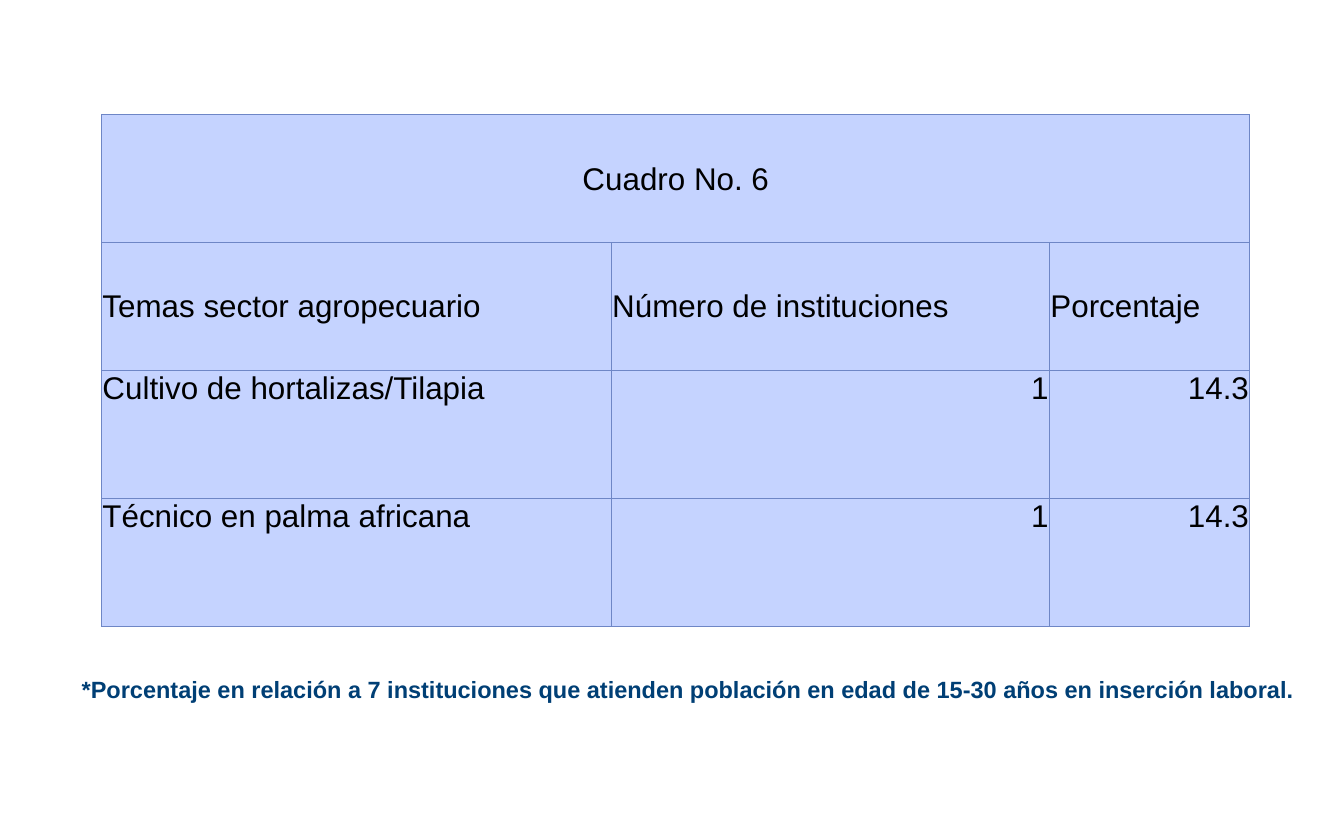
from pptx import Presentation
from pptx import util as u
from pptx.dml.color import RGBColor
from pptx.enum import text
from pptx.oxml import parse_xml
from pptx.oxml.ns import nsdecls

BLACK = RGBColor(0x00, 0x00, 0x00)
NAVY = RGBColor(0x00, 0x3F, 0x75)
PALE_BLUE = RGBColor(0xC5, 0xD3, 0xFF)
BORDER_BLUE = RGBColor(0x6E, 0x86, 0xC6)

LEFT, CENTER, RIGHT = text.PP_ALIGN.LEFT, text.PP_ALIGN.CENTER, text.PP_ALIGN.RIGHT
TOP, MIDDLE = text.MSO_ANCHOR.TOP, text.MSO_ANCHOR.MIDDLE

COLUMN_WIDTHS = [5.42, 4.66, 2.13]
ROW_HEIGHT = 1.36
ROWS = [
    ["Cuadro No. 6"],
    ["Temas sector agropecuario", "Número de instituciones", "Porcentaje"],
    ["Cultivo de hortalizas/Tilapia", "1", "14.3"],
    ["Técnico en palma africana", "1", "14.3"],
]
FOOTNOTE = (
    "*Porcentaje en relación a 7 instituciones que atienden población "
    "en edad de 15-30 años en inserción laboral."
)


class SlideBuilder:
    font_name = "Arial"

    def __init__(self, deck):
        self.page = deck.slides.add_slide(deck.slide_layouts[6])

    def fill_text(self, frame, words, size, color, bold=False, align=LEFT):
        frame.text = words
        para = frame.paragraphs[0]
        para.alignment = align
        for span in para.runs:
            span.font.name = self.font_name
            span.font.size = u.Pt(size)
            span.font.bold = bold
            span.font.color.rgb = color

    def note(self, words, left, top, width, height):
        box = self.page.shapes.add_textbox(
            u.Inches(left), u.Inches(top), u.Inches(width), u.Inches(height)
        )
        box.text_frame.word_wrap = True
        self.fill_text(box.text_frame, words, 18, NAVY, bold=True)

    def style_cell(self, cell, anchor):
        properties = cell._tc.get_or_add_tcPr()
        for side in ("lnL", "lnR", "lnT", "lnB"):
            properties.append(parse_xml(
                f'<a:{side} {nsdecls("a")} w="{u.Pt(0.75)}"><a:solidFill>'
                f'<a:srgbClr val="{BORDER_BLUE}"/></a:solidFill></a:{side}>'
            ))
        cell.fill.solid()
        cell.fill.fore_color.rgb = PALE_BLUE
        cell.vertical_anchor = anchor
        cell.margin_left = cell.margin_right = cell.margin_top = u.Inches(0.01)
        cell.margin_bottom = 0

    def table(self, rows, left, top):
        grid = self.page.shapes.add_table(
            len(rows), len(COLUMN_WIDTHS), u.Inches(left), u.Inches(top),
            u.Inches(sum(COLUMN_WIDTHS)), u.Inches(ROW_HEIGHT * len(rows)),
        ).table
        for column, width in zip(grid.columns, COLUMN_WIDTHS):
            column.width = u.Inches(width)
        for row_index, words in enumerate(rows):
            grid.rows[row_index].height = u.Inches(ROW_HEIGHT)
            for cell in grid.rows[row_index].cells:
                self.style_cell(cell, MIDDLE if row_index < 2 else TOP)
            for column_index, word in enumerate(words):
                if row_index == 0:
                    align = CENTER
                else:
                    align = RIGHT if row_index > 1 and column_index else LEFT
                cell = grid.cell(row_index, column_index)
                self.fill_text(cell.text_frame, word, 24, BLACK, align=align)
        grid.cell(0, 0).merge(grid.cell(0, len(COLUMN_WIDTHS) - 1))


def main():
    deck = Presentation()
    deck.slide_width = u.Inches(14.29)
    deck.slide_height = u.Inches(8.9)
    builder = SlideBuilder(deck)
    builder.table(ROWS, 1.08, 1.22)
    builder.note(FOOTNOTE, 0.77, 7.13, 13.31, 0.4)
    deck.save("out.pptx")


if __name__ == "__main__":
    main()
